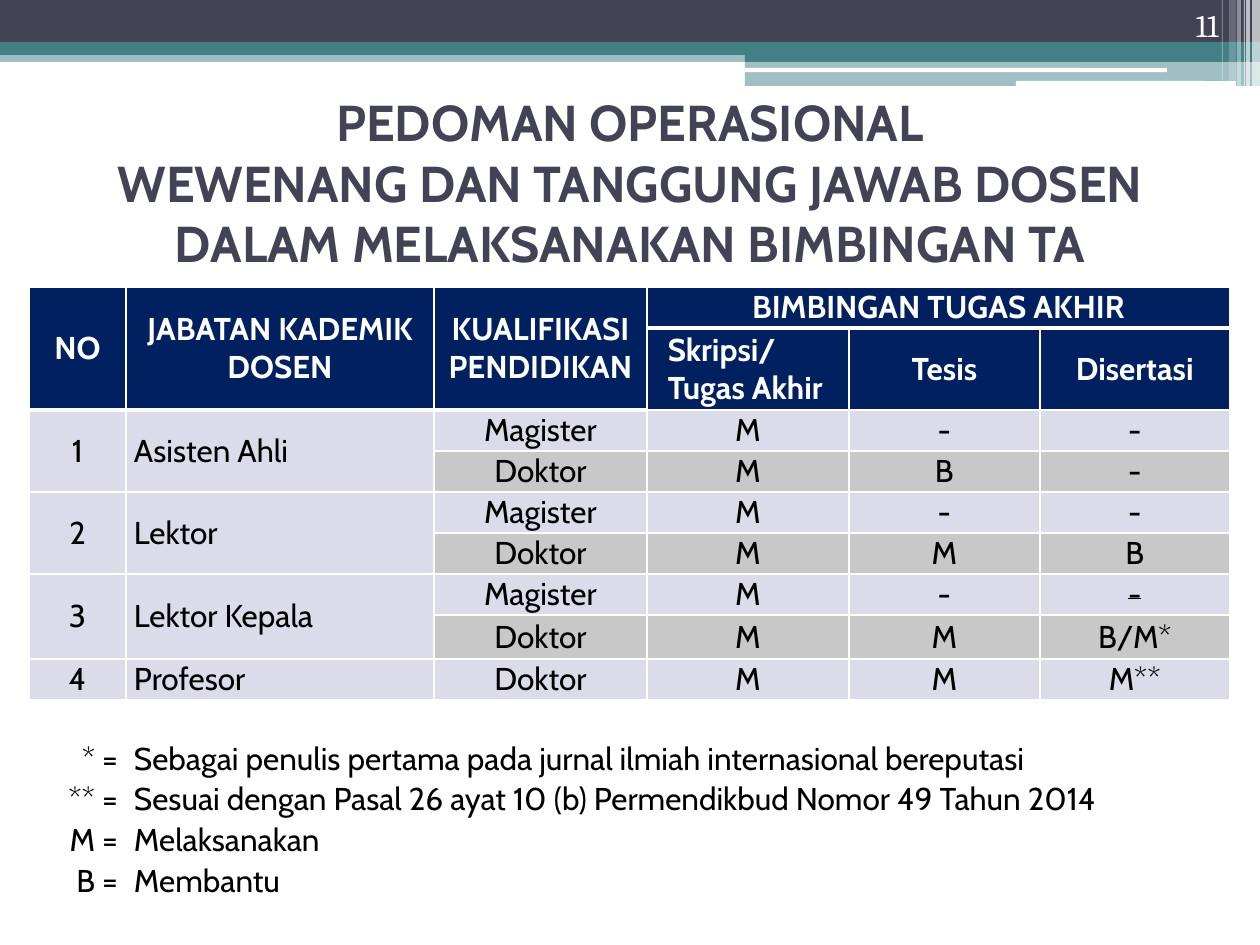
"""Build the slide on lecturers' authority in final project supervision."""
from dataclasses import dataclass
from typing import Optional

from lxml.etree import SubElement
from pptx import Presentation
from pptx.dml.color import RGBColor
from pptx.enum.shapes import MSO_SHAPE
from pptx.enum.text import MSO_ANCHOR, MSO_AUTO_SIZE, PP_ALIGN
from pptx.oxml.ns import qn
from pptx.util import Emu, Pt

PIXELS_PER_INCH = 126
COLORS = {
    "slate": "424456", "teal": "438086", "white": "FFFFFF", "black": "000000",
    "navy": "002060", "lavender": "DBDBE9", "gray": "C8C8C8",
}
COLUMN_WIDTHS = [97, 308, 213, 202, 35, 156, 59, 45, 61, 25]
ROW_HEIGHT = 41
TALL_ROWS = {1: 82, 7: 44, 9: 79}
ROW_COUNT = 13
FIRST_BODY_ROW = 2
FIRST_NOTE_ROW = 9
VALUE_COLUMNS = {2: 1, 3: 1, 4: 2, 6: 4}


@dataclass(frozen=True)
class Band:
    left: int
    top: int
    width: int
    height: int
    color: str
    opacity: int = 100
    rounded: bool = False


@dataclass(frozen=True)
class TableCell:
    row: int
    column: int
    text: str
    fill: Optional[str] = None
    row_span: int = 1
    column_span: int = 1
    align: PP_ALIGN = PP_ALIGN.CENTER
    anchor: MSO_ANCHOR = MSO_ANCHOR.MIDDLE
    color: str = "black"
    bold: bool = False
    strike: bool = False
    left_margin: int = 8


BANDS = [
    Band(0, 50, 1260, 12, "teal", 50),
    Band(0, 0, 1260, 42, "slate"),
    Band(0, 42, 1260, 13, "teal"),
    Band(745, 49, 515, 13, "teal"),
    Band(745, 61, 515, 25, "teal", 50),
    Band(745, 68, 422, 4, "white", rounded=True),
    Band(1016, 81, 220, 5, "white", rounded=True),
    Band(1252, 0, 8, 86, "white", 65),
    Band(1246, 0, 4, 86, "white", 65),
    Band(1244, 0, 1, 86, "white", 60),
    Band(1237, 0, 4, 86, "white", 40),
    Band(1229, 0, 7, 81, "white", 20),
    Band(1222, 0, 1, 81, "white", 30),
]

HEADER = {"fill": "navy", "color": "white", "bold": True}
HEADER_CELLS = [
    TableCell(0, 0, "NO", row_span=2, **HEADER),
    TableCell(0, 1, "JABATAN KADEMIK DOSEN", row_span=2, **HEADER),
    TableCell(0, 2, "KUALIFIKASI PENDIDIKAN", row_span=2, **HEADER),
    TableCell(0, 3, "BIMBINGAN TUGAS AKHIR", column_span=7, **HEADER),
    TableCell(1, 3, "Skripsi/\vTugas Akhir", align=PP_ALIGN.LEFT, left_margin=21, **HEADER),
    TableCell(1, 4, "Tesis", column_span=2, **HEADER),
    TableCell(1, 6, "Disertasi", column_span=4, **HEADER),
]

POSITIONS = [
    ("Asisten Ahli", [("Magister", "M", "-", "-"), ("Doktor", "M", "B", "-")]),
    ("Lektor", [("Magister", "M", "-", "-"), ("Doktor", "M", "M", "B")]),
    ("Lektor Kepala", [("Magister", "M", "-", "-"), ("Doktor", "M", "M", "B/M*")]),
    ("Profesor", [("Doktor", "M", "M", "M**")]),
]
STRUCK_CELL = (6, 6)

NOTES = [
    ("* =", "Sebagai penulis pertama pada jurnal ilmiah internasional bereputasi", 9),
    ("** =", "Sesuai dengan Pasal 26 ayat 10 (b) Permendikbud Nomor 49 Tahun 2014", 9),
    ("M =", "Melaksanakan", 4),
    ("B =", "Membantu", 4),
]


def px(length: int) -> Emu:
    return Emu(round(length * 914400 / PIXELS_PER_INCH))


def rgb(name: str) -> RGBColor:
    return RGBColor.from_string(COLORS[name])


def place(shape, left: int, top: int, width: int, height: int) -> None:
    shape.left, shape.top, shape.width, shape.height = map(px, (left, top, width, height))


def write_text(frame, text: str, *, size: float = 18, font: str = "Cabin", color: str = "black",
               bold: bool = False, strike: bool = False, align: PP_ALIGN = PP_ALIGN.CENTER) -> None:
    paragraph = frame.paragraphs[0]
    paragraph.text = text
    paragraph.alignment = align
    for run in paragraph.runs:
        run.font.size = Pt(size)
        run.font.name = font
        run.font.bold = bold
        run.font.color.rgb = rgb(color)
        if strike:
            run.font._element.set("strike", "sngStrike")


def draw_band(slide, band: Band) -> None:
    kind = MSO_SHAPE.ROUNDED_RECTANGLE if band.rounded else MSO_SHAPE.RECTANGLE
    shape = slide.shapes.add_shape(kind, *map(px, (band.left, band.top, band.width, band.height)))
    shape.shadow.inherit = False
    shape.line.fill.background()
    shape.fill.solid()
    shape.fill.fore_color.rgb = rgb(band.color)
    if band.opacity < 100:
        color = shape._element.spPr.find(qn("a:solidFill"))[0]
        SubElement(color, qn("a:alpha"), val=str(band.opacity * 1000))


def set_borders(cell, bottom: float) -> None:
    properties = cell._tc.get_or_add_tcPr()
    for side, width in {"L": 1, "R": 1, "T": 1, "B": bottom}.items():
        line = SubElement(properties, qn(f"a:ln{side}"), w=str(Pt(width)))
        fill = SubElement(line, qn("a:solidFill"))
        SubElement(fill, qn("a:srgbClr"), val=COLORS["white"])


def body_cells() -> list[TableCell]:
    cells = []
    row = FIRST_BODY_ROW
    for number, (position, levels) in enumerate(POSITIONS, 1):
        span = len(levels)
        cells.append(TableCell(row, 0, str(number), "lavender", span))
        cells.append(TableCell(row, 1, position, "lavender", span, align=PP_ALIGN.LEFT))
        for fill, values in zip(("lavender", "gray"), levels):
            for (column, width), value in zip(VALUE_COLUMNS.items(), values):
                cells.append(TableCell(row, column, value, fill, column_span=width,
                                       strike=(row, column) == STRUCK_CELL))
            row += 1
    return cells


def note_cells() -> list[TableCell]:
    cells = []
    for row, (symbol, meaning, span) in enumerate(NOTES, FIRST_NOTE_ROW):
        anchor = MSO_ANCHOR.BOTTOM if row == FIRST_NOTE_ROW else MSO_ANCHOR.MIDDLE
        cells.append(TableCell(row, 0, symbol, align=PP_ALIGN.RIGHT, anchor=anchor))
        cells.append(TableCell(row, 1, meaning, column_span=span, align=PP_ALIGN.LEFT, anchor=anchor))
        if span == 4:
            cells.append(TableCell(row, 5, "", column_span=2))
    return cells


def fill_cell(table, item: TableCell) -> None:
    cell = table.cell(item.row, item.column)
    last_row = item.row + item.row_span
    last_column = item.column + item.column_span
    if item.row_span * item.column_span > 1:
        cell.merge(table.cell(last_row - 1, last_column - 1))
    if item.fill:
        for row in range(item.row, last_row):
            for column in range(item.column, last_column):
                fill = table.cell(row, column).fill
                fill.solid()
                fill.fore_color.rgb = rgb(item.fill)
    cell.vertical_anchor = item.anchor
    cell.margin_left = px(item.left_margin)
    write_text(cell.text_frame, item.text, color=item.color, bold=item.bold,
               strike=item.strike, align=item.align)


def draw_table(slide) -> None:
    heights = [TALL_ROWS.get(row, ROW_HEIGHT) for row in range(ROW_COUNT)]
    frame = slide.shapes.add_table(ROW_COUNT, len(COLUMN_WIDTHS), px(29), px(287),
                                   px(sum(COLUMN_WIDTHS)), px(sum(heights)))
    table = frame.table
    table.first_row = table.horz_banding = False
    for column, width in zip(table.columns, COLUMN_WIDTHS):
        column.width = px(width)
    for index, (row, height) in enumerate(zip(table.rows, heights)):
        row.height = px(height)
        for column, cell in enumerate(row.cells):
            cell.margin_left = cell.margin_right = px(8)
            cell.margin_top = cell.margin_bottom = 0
            set_borders(cell, 3 if index == 0 or (index == 1 and column < 3) else 1)
            cell.fill.background()
    for item in HEADER_CELLS + body_cells() + note_cells():
        fill_cell(table, item)


def main() -> None:
    presentation = Presentation()
    presentation.slide_width, presentation.slide_height = px(1260), px(945)
    slide = presentation.slides.add_slide(presentation.slide_layouts[5])
    for band in BANDS:
        draw_band(slide, band)

    title = slide.shapes.title
    place(title, 63, 108, 1134, 148)
    title.text_frame.auto_size = MSO_AUTO_SIZE.NONE
    title.text_frame.vertical_anchor = MSO_ANCHOR.MIDDLE
    write_text(title.text_frame, "PEDOMAN OPERASIONAL\vWEWENANG DAN TANGGUNG JAWAB DOSEN "
               "DALAM MELAKSANAKAN BIMBINGAN TA", size=28.8, color="slate", bold=True)
    draw_table(slide)

    page_number = slide.shapes.add_textbox(px(1126), px(0), px(105), px(50))
    page_number.text_frame.word_wrap = True
    page_number.text_frame.vertical_anchor = MSO_ANCHOR.BOTTOM
    write_text(page_number.text_frame, "11", font="Cambria", color="white", align=PP_ALIGN.RIGHT)
    presentation.save("out.pptx")


if __name__ == "__main__":
    main()
